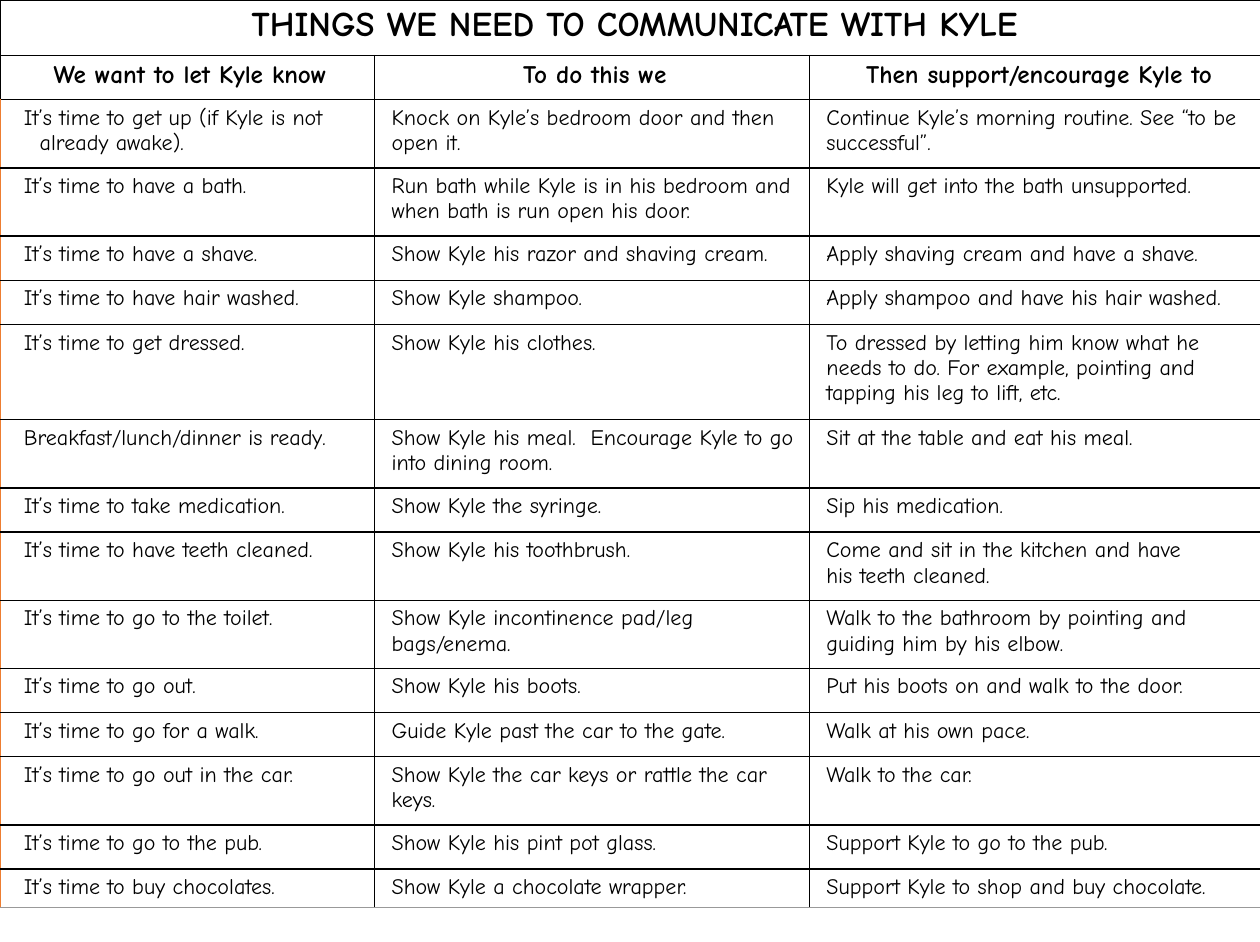
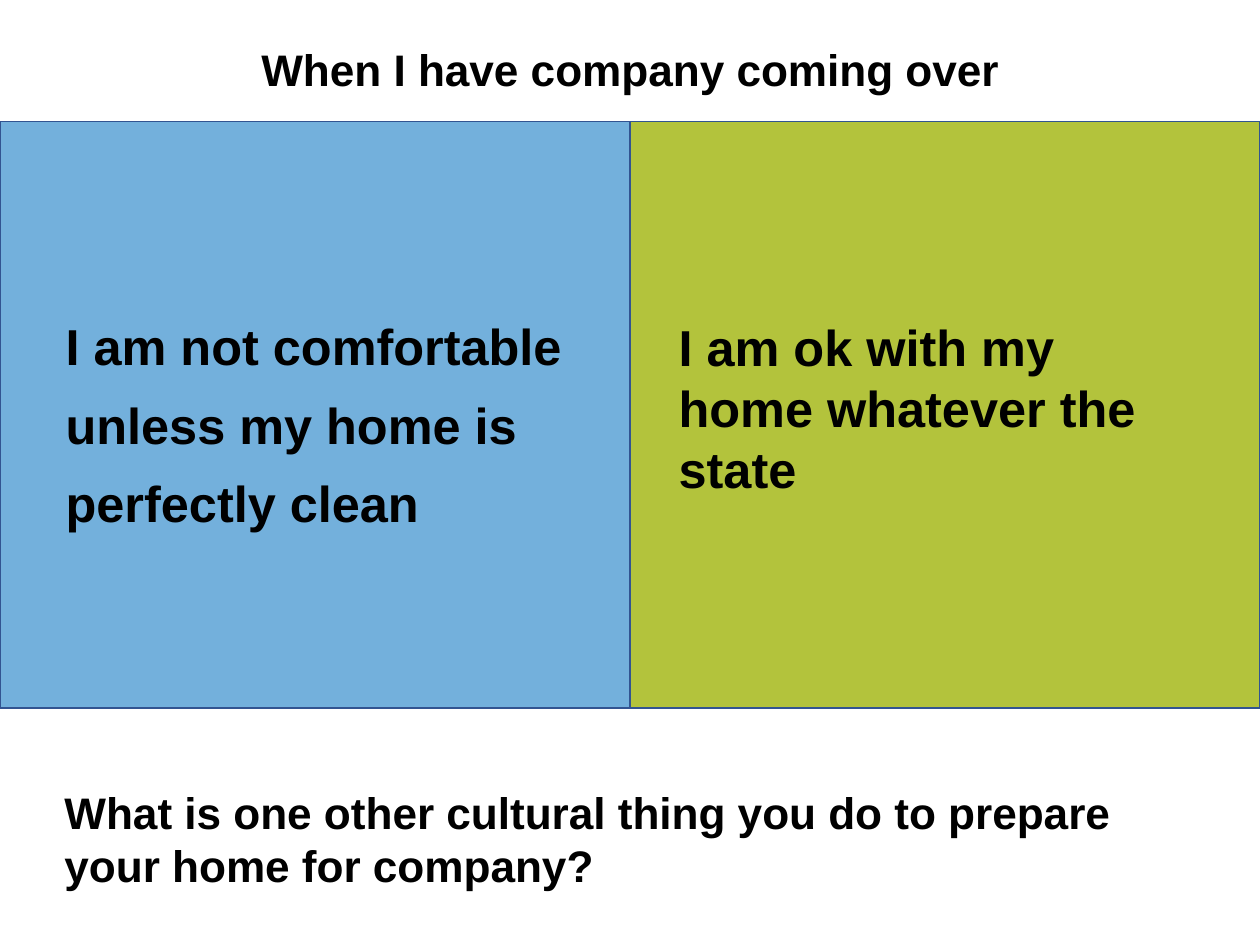
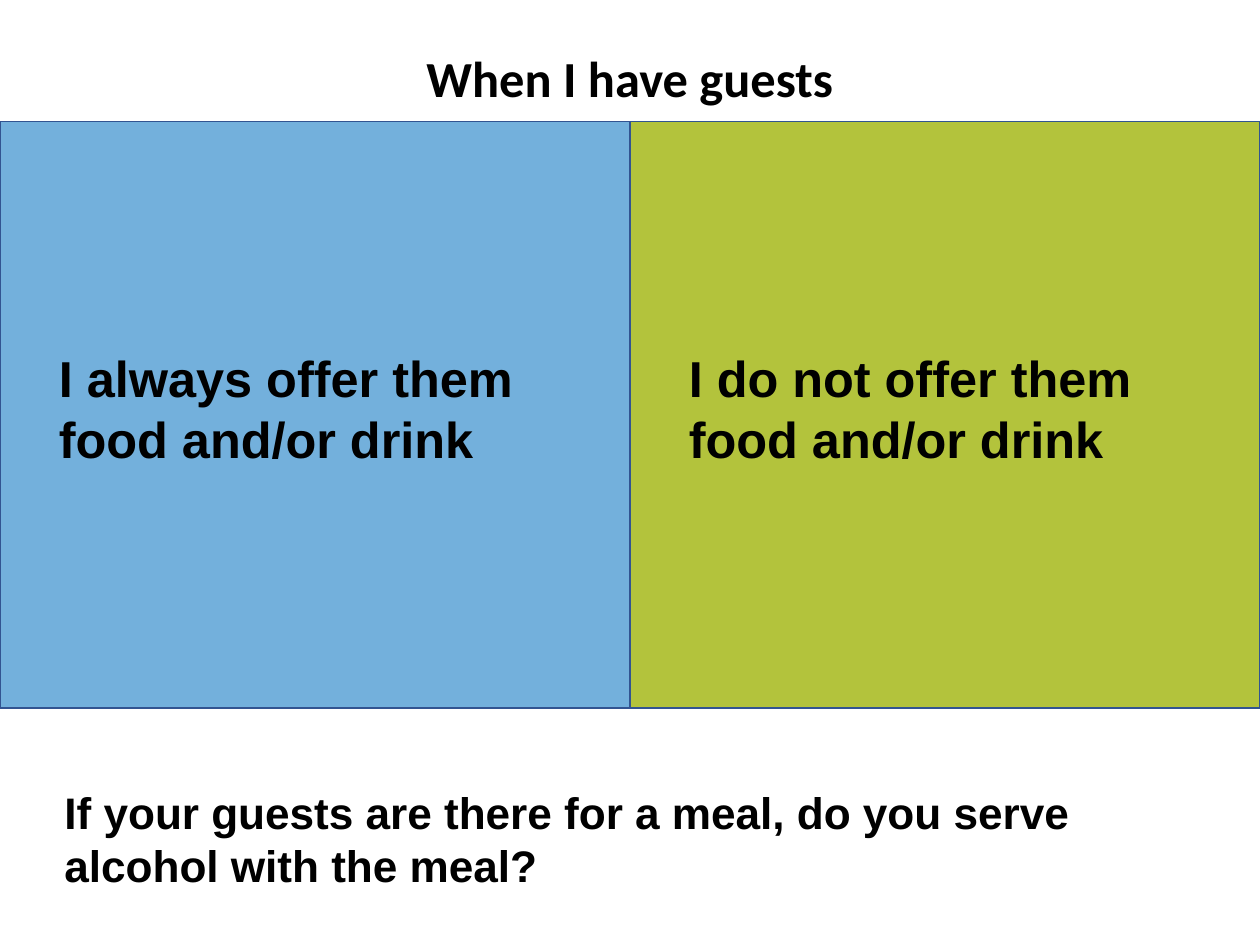
import pptx
import pptx.dml.color
import pptx.enum.shapes
import pptx.enum.text
import pptx.oxml
import pptx.oxml.ns
import pptx.util

WIDTH, HEIGHT = 11.1, 8.3
GRID = 100
BLACK, ORANGE, GREY = "000000", "ED7D31", "999999"
BLUE, GREEN, OUTLINE = "0070C0", "B3C33C", "325491"
HAND, SANS, HUMANIST = "Comic Neue", "Arial", "Calibri"
CENTER = pptx.enum.text.PP_ALIGN.CENTER
LEFT = pptx.enum.text.PP_ALIGN.LEFT
TITLE_ONLY, BLANK = 5, 6

PANELS = (0, 12.89, 100, 62.29)
QUESTION = (4.23, 82.77, 90.09, 12.53)

COLUMN_WIDTHS = (3.3, 3.83, 4)
ROW_HEIGHTS = (0.49, 0.39, 0.6, 0.6, 0.39, 0.39, 0.84, 0.6,
               0.39, 0.6, 0.6, 0.39, 0.39, 0.6, 0.39, 0.34)
ROWS = [
    ("THINGS WE NEED TO COMMUNICATE WITH KYLE", "", ""),
    ("We want to let Kyle know", "To do this we", "Then support/encourage Kyle to"),
    ("It’s time to get up (if Kyle is not already awake).",
     "Knock on Kyle’s bedroom door and then open it.",
     "Continue Kyle’s morning routine. See “to be successful”."),
    ("It’s time to have a bath.",
     "Run bath while Kyle is in his bedroom and when bath is run open his door.",
     "Kyle will get into the bath unsupported."),
    ("It’s time to have a shave.", "Show Kyle his razor and shaving cream.",
     "Apply shaving cream and have a shave."),
    ("It’s time to have hair washed.", "Show Kyle shampoo.",
     "Apply shampoo and have his hair washed."),
    ("It’s time to get dressed.", "Show Kyle his clothes.",
     "To dressed by letting him know what he needs to do. "
     "For example, pointing and tapping his leg to lift, etc."),
    ("Breakfast/lunch/dinner is ready.",
     "Show Kyle his meal.  Encourage Kyle to go into dining room.",
     "Sit at the table and eat his meal."),
    ("It’s time to take medication.", "Show Kyle the syringe.", "Sip his medication."),
    ("It’s time to have teeth cleaned.", "Show Kyle his toothbrush.",
     "Come and sit in the kitchen and have\nhis teeth cleaned."),
    ("It’s time to go to the toilet.", "Show Kyle incontinence pad/leg bags/enema.",
     "Walk to the bathroom by pointing and guiding him by his elbow."),
    ("It’s time to go out.", "Show Kyle his boots.",
     "Put his boots on and walk to the door."),
    ("It’s time to go for a walk.", "Guide Kyle past the car to the gate.",
     "Walk at his own pace."),
    ("It’s time to go out in the car.", "Show Kyle the car keys or rattle the car keys.",
     "Walk to the car."),
    ("It’s time to go to the pub.", "Show Kyle his pint pot glass.",
     "Support Kyle to go to the pub."),
    ("It’s time to buy chocolates.", "Show Kyle a chocolate wrapper.",
     "Support Kyle to shop and buy chocolate."),
]

COMPARISONS = [
    dict(title="When I have company coming over",
         title_box=(0, 3.86, 100, 6.87),
         title_format=dict(size=28),
         statements=[
             dict(text="I am not comfortable unless my home is perfectly clean",
                  margin=0.48, spacing=1.3),
             dict(text="I am ok with my home whatever the state",
                  box=(5.95, 32.3, 85.59, 33.27)),
         ],
         question="What is one other cultural thing you do to prepare "
                  "your home for company?"),
    dict(title="When I have guests",
         title_box=(0, 2.77, 100, 8.92),
         title_format=dict(size=32, font=HUMANIST, spacing=1.3),
         statements=[
             dict(text="I always offer them food and/or drink",
                  box=(7.57, 37.52, 83.42, 22.82)),
             dict(text="I do not offer them food and/or drink",
                  box=(7.57, 37.52, 85.59, 22.82)),
         ],
         question="If your guests are there for a meal, do you serve "
                  "alcohol with the meal?"),
]


def color(value):
    """Turn a hex string into a colour."""
    return pptx.dml.color.RGBColor.from_string(value)


def within(outer, inner):
    """Turn a box given in hundredths of an outer box into slide grid units."""
    left, top, width, height = outer
    return (left + inner[0] * width / GRID, top + inner[1] * height / GRID,
            inner[2] * width / GRID, inner[3] * height / GRID)


def lengths(box):
    """Turn a box in grid units into slide lengths."""
    sizes = (WIDTH, HEIGHT, WIDTH, HEIGHT)
    return [pptx.util.Inches(part * size / GRID) for part, size in zip(box, sizes)]


def write(frame, text, size=28, font=SANS, bold=True, align=LEFT,
          spacing=None, margin=0, indent=0):
    """Fill a text frame with formatted text, one paragraph a line."""
    frame.word_wrap = True
    frame.text = text
    for paragraph in frame.paragraphs:
        paragraph.alignment = align
        paragraph.line_spacing = spacing
        properties = paragraph._p.get_or_add_pPr()
        properties.set("marL", str(pptx.util.Inches(margin)))
        properties.set("indent", str(pptx.util.Inches(indent)))
        for run in paragraph.runs:
            run.font.size = pptx.util.Pt(size)
            run.font.name = font
            run.font.bold = bold
            run.font.color.rgb = color(BLACK)


def add_label(slide, box, text, **text_format):
    """Add a text box."""
    label = slide.shapes.add_textbox(*lengths(box))
    write(label.text_frame, text, **text_format)


def add_title(slide, box, text, **text_format):
    """Place and format the title placeholder."""
    title = slide.shapes.title
    title.left, title.top, title.width, title.height = lengths(box)
    title.text_frame.auto_size = pptx.enum.text.MSO_AUTO_SIZE.NONE
    title.text_frame.vertical_anchor = pptx.enum.text.MSO_ANCHOR.MIDDLE
    write(title.text_frame, text, align=CENTER, **text_format)


def add_panel(slide, box, fill, opacity, text, text_box=None, **text_format):
    """Add a coloured panel with its statement, inside it or in a box over it."""
    panel = slide.shapes.add_shape(
        pptx.enum.shapes.MSO_SHAPE.RECTANGLE, *lengths(box))
    panel.shadow.inherit = False
    panel.fill.solid()
    panel.fill.fore_color.rgb = color(fill)
    if opacity < 100:
        tint = panel.fill._xPr.find(".//" + pptx.oxml.ns.qn("a:srgbClr"))
        tint.append(pptx.oxml.parse_xml(
            f'<a:alpha {pptx.oxml.ns.nsdecls("a")} val="{opacity * 1000}"/>'))
    panel.line.color.rgb = color(OUTLINE)
    panel.line.width = pptx.util.Pt(1)
    if text_box:
        add_label(slide, within(box, text_box), text, size=32, **text_format)
    else:
        panel.text_frame.vertical_anchor = pptx.enum.text.MSO_ANCHOR.MIDDLE
        write(panel.text_frame, text, size=32, **text_format)


def add_comparison_slide(presentation, title, title_box, title_format,
                         statements, question):
    """Add a slide with two facing statements and a question below."""
    slide = presentation.slides.add_slide(presentation.slide_layouts[TITLE_ONLY])
    add_title(slide, title_box, title, **title_format)
    looks = ((BLUE, 55), (GREEN, 100))
    for index, ((fill, opacity), statement) in enumerate(zip(looks, statements)):
        text_format = dict(statement)
        text_box = text_format.pop("box", None)
        add_panel(slide, within(PANELS, (index * 50, 0, 50, 100)), fill, opacity,
                  text_box=text_box, **text_format)
    add_label(slide, QUESTION, question)


def set_borders(cell, **sides):
    """Draw the four borders of a cell in the given colours."""
    properties = cell._tc.get_or_add_tcPr()
    for position, side in enumerate("LRTB"):
        properties.insert(position, pptx.oxml.parse_xml(
            f'<a:ln{side} {pptx.oxml.ns.nsdecls("a")} w="12700"><a:solidFill>'
            f'<a:srgbClr val="{sides.get(side, BLACK)}"/></a:solidFill></a:ln{side}>'))


def cell_format(row, column):
    """Give the text format of a table cell from its place."""
    if row < 2:
        return dict(size=16 if row else 22, align=CENTER)
    body = dict(size=14, bold=False)
    if column == 0:
        body.update(dict(margin=0.2, indent=-0.14) if row == 2 else dict(indent=0.06))
    return body


def border_colors(row, column):
    """Give the border colours that differ from black from a cell's place."""
    sides = {}
    if row >= 2 and column == 0:
        sides["L"] = ORANGE
    if row >= 2 and column == len(COLUMN_WIDTHS) - 1:
        sides["R"] = ORANGE
    if row == len(ROWS) - 1:
        sides["B"] = GREY
    return sides


def add_table_slide(presentation):
    """Add the slide with the communication table."""
    slide = presentation.slides.add_slide(presentation.slide_layouts[BLANK])
    table = slide.shapes.add_table(
        len(ROWS), len(COLUMN_WIDTHS), 0, 0,
        pptx.util.Inches(sum(COLUMN_WIDTHS)), pptx.util.Inches(sum(ROW_HEIGHTS))).table
    table.first_row = table.horz_banding = False
    for column, width in zip(table.columns, COLUMN_WIDTHS):
        column.width = pptx.util.Inches(width)
    for row, height in zip(table.rows, ROW_HEIGHTS):
        row.height = pptx.util.Inches(height)
    table.cell(0, 0).merge(table.cell(0, len(COLUMN_WIDTHS) - 1))
    for row, texts in enumerate(ROWS):
        for column, text in enumerate(texts):
            cell = table.cell(row, column)
            cell.fill.background()
            cell.margin_left = pptx.util.Inches(0.15)
            cell.margin_right = pptx.util.Inches(0.1)
            cell.margin_top = cell.margin_bottom = pptx.util.Inches(0.05)
            set_borders(cell, **border_colors(row, column))
            if text:
                write(cell.text_frame, text, font=HAND, **cell_format(row, column))


def main():
    """Build and save the presentation."""
    presentation = pptx.Presentation()
    presentation.slide_width = pptx.util.Inches(WIDTH)
    presentation.slide_height = pptx.util.Inches(HEIGHT)
    add_table_slide(presentation)
    for comparison in COMPARISONS:
        add_comparison_slide(presentation, **comparison)
    presentation.save("out.pptx")


if __name__ == "__main__":
    main()
